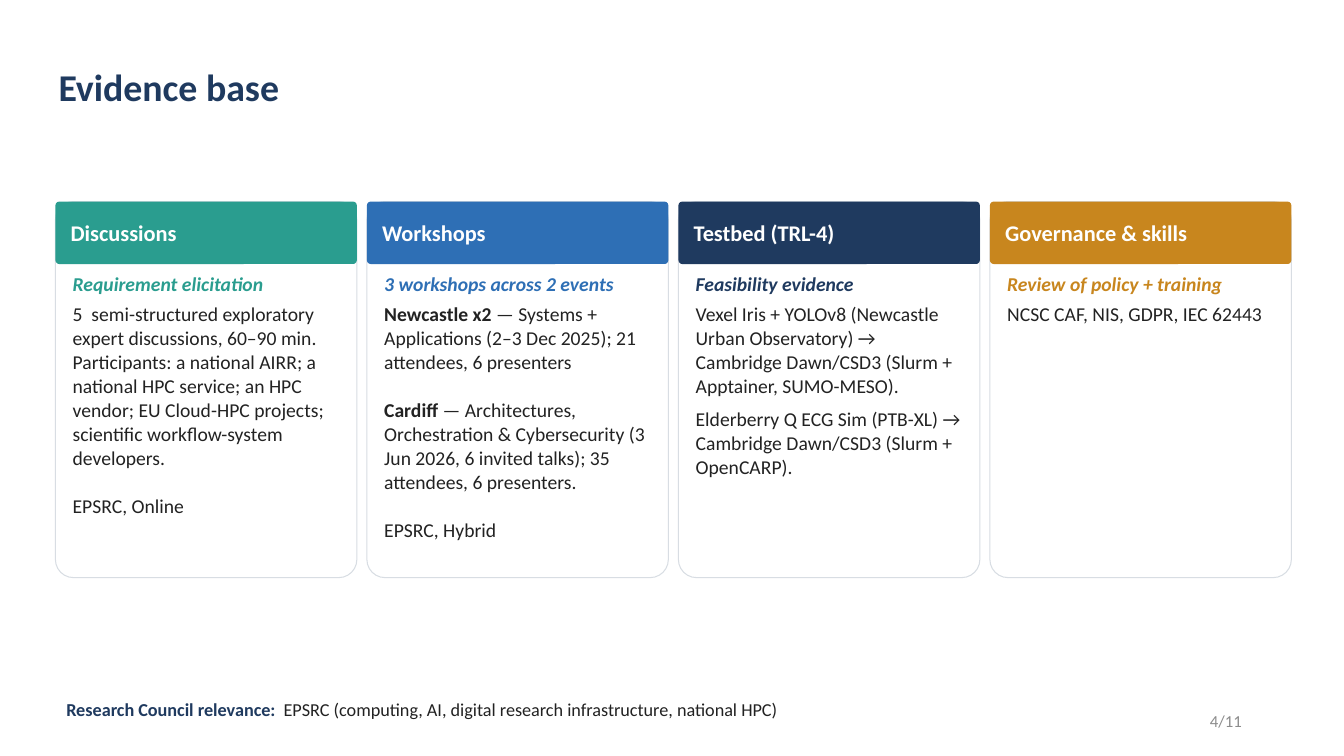
import pptx
import pptx.util
import pptx.dml.color
import pptx.enum.shapes
import pptx.enum.text

Pt = pptx.util.Pt
SHAPE = pptx.enum.shapes.MSO_SHAPE
ANCHOR = pptx.enum.text.MSO_ANCHOR
ALIGN = pptx.enum.text.PP_ALIGN
FIT = pptx.enum.text.MSO_AUTO_SIZE

HEX = {
    "navy": "1F3A5F", "teal": "2A9D8F", "blue": "2E6FB5", "gold": "C8861E",
    "ink": "222222", "edge": "D8DDE3", "gray": "8C8C8C", "white": "FFFFFF",
}

TITLE = "Evidence base"
# Each card: colour, heading, subtitle, body height, paragraph gap, body.
# A body paragraph is a pair of bold lead and plain text.
CARDS = [
    ("teal", "Discussions", "Requirement elicitation", 157, 17.4, [
        ("", "5  semi-structured exploratory expert discussions, 60–90 min. "
             "Participants: a national AIRR; a national HPC service; an HPC "
             "vendor; EU Cloud-HPC projects; scientific workflow-system "
             "developers."),
        ("", "EPSRC, Online")]),
    ("blue", "Workshops", "3 workshops across 2 events", 174.2, 17.4, [
        ("Newcastle x2", " — Systems + Applications (2–3 Dec 2025); "
                         "21 attendees, 6 presenters"),
        ("Cardiff", " — Architectures, Orchestration & Cybersecurity "
                    "(3 Jun 2026, 6 invited talks); 35 attendees, "
                    "6 presenters."),
        ("", "EPSRC, Hybrid")]),
    ("navy", "Testbed (TRL-4)", "Feasibility evidence", 127.4, 6.4, [
        ("", "Vexel Iris + YOLOv8 (Newcastle Urban Observatory) → "
             "Cambridge Dawn/CSD3 (Slurm + Apptainer, SUMO-MESO)."),
        ("", "Elderberry Q ECG Sim (PTB-XL) → Cambridge Dawn/CSD3 "
             "(Slurm + OpenCARP).")]),
    ("gold", "Governance & skills", "Review of policy + training", 18.7, 0, [
        ("", "NCSC CAF, NIS, GDPR, IEC 62443")]),
]
NOTE = ("Research Council relevance:  ",
        "EPSRC (computing, AI, digital research infrastructure, national HPC)")
PAGE = "4/11"

LEFT, TOP, WIDE, TALL = 39.6, 144, 215.3, 268.6
STEP, HEAD, INSET = 222.5, 44.6, 10.1
TIGHT = (2.2, 0.7, 2.2, 0.7)
LOOSE = (7.2, 3.6, 7.2, 3.6)


def color(name):
    return pptx.dml.color.RGBColor.from_string(HEX[name])


def style(para, size, tone, bold=False, italic=False):
    font = para.font
    font.name, font.size = "Calibri", Pt(size)
    font.bold, font.italic = bold, italic
    font.color.rgb = color(tone)


def setup(frame, pads, anchor=ANCHOR.TOP, fit=FIT.SHAPE_TO_FIT_TEXT):
    """Set wrapping, margins, anchor and sizing of a text frame."""
    frame.word_wrap = True
    frame.auto_size = fit
    frame.vertical_anchor = anchor
    (frame.margin_left, frame.margin_top,
     frame.margin_right, frame.margin_bottom) = map(Pt, pads)
    return frame


def add_box(slide, area, pads, **opts):
    box = slide.shapes.add_textbox(*map(Pt, area))
    return setup(box.text_frame, pads, **opts)


def add_panel(slide, area, fill, line=None):
    panel = slide.shapes.add_shape(SHAPE.ROUNDED_RECTANGLE, *map(Pt, area))
    panel.adjustments[0] = 0.06
    panel.shadow.inherit = False
    panel.fill.solid()
    panel.fill.fore_color.rgb = color(fill)
    if line:
        panel.line.color.rgb = color(line)
        panel.line.width = Pt(0.75)
    else:
        panel.line.fill.background()
    return panel


def add_lead(para, lead, text, tone):
    """Add a bold lead followed by plain text."""
    if lead:
        run = para.add_run()
        run.text = lead
        run.font.bold = True
        run.font.color.rgb = color(tone)
    para.add_run().text = text


def add_card(slide, left, card):
    tone, head, sub, tall, gap, body = card
    add_panel(slide, (left, TOP, WIDE, TALL), "white", "edge")
    band = add_panel(slide, (left, TOP, WIDE, HEAD), tone)
    frame = setup(band.text_frame, (10.1, 2.9, 5.8, 2.9),
                  ANCHOR.MIDDLE, FIT.NONE)
    para = frame.paragraphs[0]
    para.text = head
    para.alignment = ALIGN.LEFT
    para.space_after = Pt(2)
    style(para, 16, "white", bold=True)

    inner = WIDE - 2 * INSET
    frame = add_box(slide, (left + INSET, TOP + 49.3, inner, 18.7), TIGHT)
    para = frame.paragraphs[0]
    para.text = sub
    style(para, 14, tone, bold=True, italic=True)

    frame = add_box(slide, (left + INSET, TOP + 70.6, inner, tall), TIGHT)
    for i, (lead, text) in enumerate(body):
        para = frame.add_paragraph() if i else frame.paragraphs[0]
        if i:
            para.space_before = Pt(gap)
        para.line_spacing = 1.02
        style(para, 14, "ink")
        add_lead(para, lead, text, "ink")


def main():
    deck = pptx.Presentation()
    deck.slide_width, deck.slide_height = Pt(960), Pt(540)
    slide = deck.slides.add_slide(deck.slide_layouts[5])

    title = slide.shapes.title
    title.left, title.top = Pt(LEFT), Pt(44.6)
    title.width, title.height = Pt(878.4), Pt(34.6)
    para = setup(title.text_frame, TIGHT).paragraphs[0]
    para.text = TITLE
    para.alignment = ALIGN.LEFT
    style(para, 27, "navy", bold=True)

    for i, card in enumerate(CARDS):
        add_card(slide, LEFT + i * STEP, card)

    para = add_box(slide, (40.3, 495.4, 551.5, 23), LOOSE).paragraphs[0]
    para.space_after = Pt(2)
    style(para, 13, "ink")
    add_lead(para, *NOTE, "navy")

    para = add_box(slide, (678.2, 500.4, 216, 28.8), LOOSE,
                   anchor=ANCHOR.MIDDLE, fit=FIT.NONE).paragraphs[0]
    para.text = PAGE
    para.alignment = ALIGN.RIGHT
    style(para, 12, "gray")

    deck.save("out.pptx")


if __name__ == "__main__":
    main()
